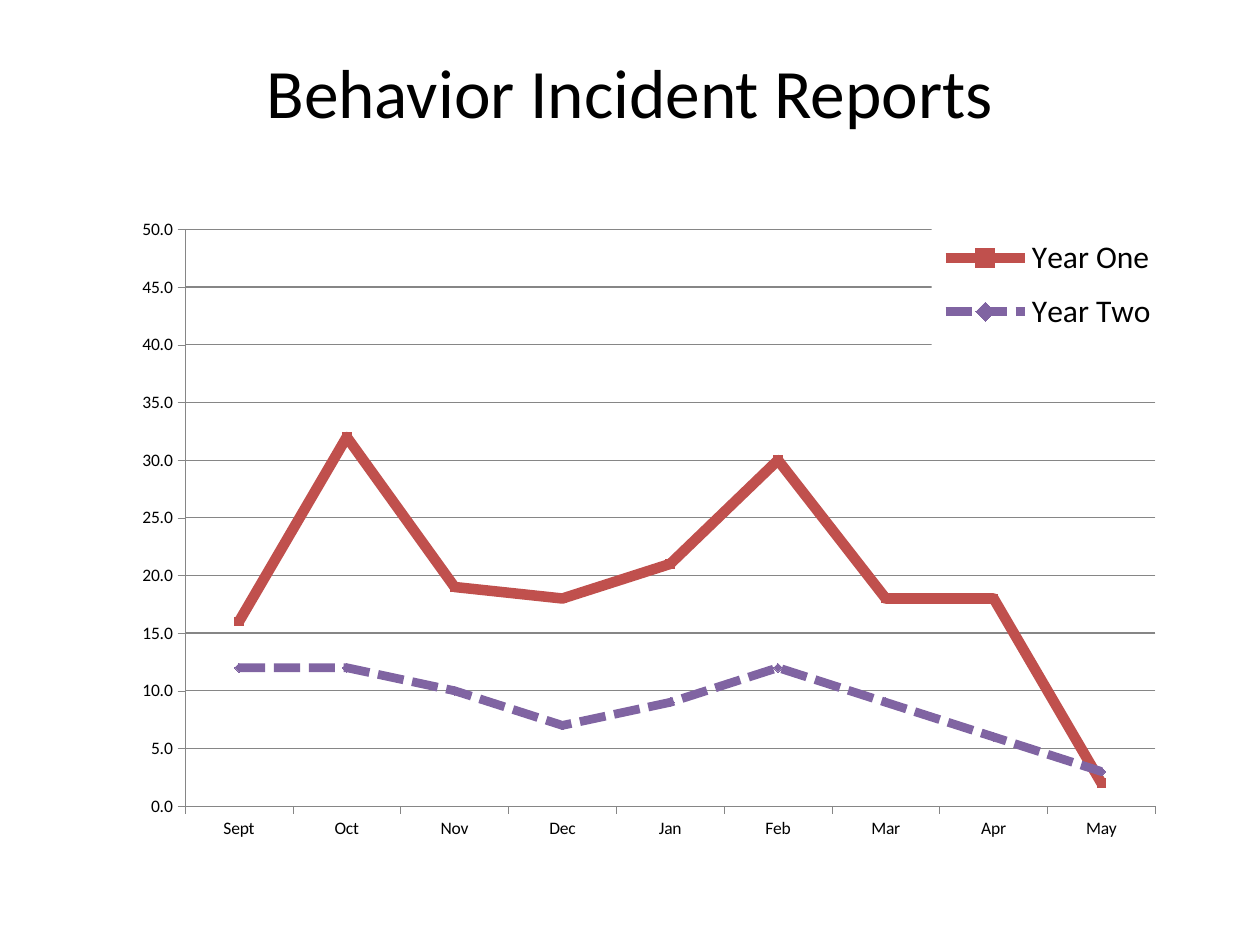
from lxml import etree
from pptx import Presentation
from pptx.chart.data import CategoryChartData
from pptx.dml.color import RGBColor
from pptx.enum.chart import XL_CHART_TYPE as CT, XL_LEGEND_POSITION as LP
from pptx.enum.chart import XL_MARKER_STYLE as MS, XL_TICK_MARK as TM
from pptx.enum.dml import MSO_LINE_DASH_STYLE as DASH
from pptx.enum.text import MSO_ANCHOR, PP_ALIGN
from pptx.oxml.ns import qn
from pptx.util import Pt

FONT = "Calibri"
MONTHS = ["Sept", "Oct", "Nov", "Dec", "Jan", "Feb", "Mar", "Apr", "May"]
SERIES = [
    ("Year One", [16, 32, 19, 18, 21, 30, 18, 18, 2],
     "C0504D", 6, DASH.SOLID, MS.SQUARE),
    ("Year Two", [12, 12, 10, 7, 9, 12, 9, 6, 3],
     "8064A2", 5, DASH.SQUARE_DOT, MS.DIAMOND),
]


def color(value):
    return RGBColor.from_string(value)


def set_font(font, size):
    font.name = FONT
    font.size = Pt(size)
    font.color.rgb = color("000000")


def set_line(line, value, width):
    line.color.rgb = color(value)
    line.width = Pt(width)


def set_layout(element, before, x, y, w, h, inner=False):
    for old in element.findall(qn("c:layout")):
        element.remove(old)
    layout = etree.Element(qn("c:layout"))
    manual = etree.SubElement(layout, qn("c:manualLayout"))
    settings = [("xMode", "edge"), ("yMode", "edge"),
                ("x", x), ("y", y), ("w", w), ("h", h)]
    if inner:
        settings.insert(0, ("layoutTarget", "inner"))
    for name, value in settings:
        etree.SubElement(manual, qn(f"c:{name}")).set("val", str(value))
    element.find(qn(before)).addprevious(layout)


def add_title(s, text):
    title = s.shapes.title
    title.left, title.top, title.width, title.height = Pt(36), Pt(24), Pt(648), Pt(56)
    tf = title.text_frame
    tf.text = text
    tf.vertical_anchor = MSO_ANCHOR.MIDDLE
    p = tf.paragraphs[0]
    p.alignment = PP_ALIGN.CENTER
    set_font(p.font, 39.6)


def format_axes(chart):
    for axis in (chart.category_axis, chart.value_axis):
        axis.major_tick_mark = TM.OUTSIDE
        axis.minor_tick_mark = TM.NONE
        set_line(axis.format.line, "868686", 0.25)
    axis = chart.value_axis
    axis.minimum_scale, axis.maximum_scale, axis.major_unit = 0, 50, 5
    axis.tick_labels.number_format = "0.0"
    axis.tick_labels.number_format_is_linked = False
    set_line(axis.major_gridlines.format.line, "868686", 0.75)


def format_series(series, value, width, dash, marker):
    series.smooth = False
    set_line(series.format.line, value, width)
    series.format.line.dash_style = dash
    series.marker.style = marker
    series.marker.size = 5
    series.marker.format.fill.solid()
    series.marker.format.fill.fore_color.rgb = color(value)
    set_line(series.marker.format.line, value, 0.75)


def add_legend(chart):
    chart.has_legend = True
    legend = chart.legend
    legend.position = LP.RIGHT
    legend.include_in_layout = False
    set_font(legend.font, 18)
    set_layout(legend._element, "c:overlay", 0.762, 0.02, 0.218, 0.19)
    sp_pr = etree.Element(qn("c:spPr"))
    fill = etree.SubElement(sp_pr, qn("a:solidFill"))
    etree.SubElement(fill, qn("a:srgbClr")).set("val", "FFFFFF")
    legend._element.find(qn("c:overlay")).addnext(sp_pr)


def add_line_chart(s):
    data = CategoryChartData(number_format="0.0")
    data.categories = MONTHS
    for name, values, *_ in SERIES:
        data.add_series(name, values)
    chart = s.shapes.add_chart(CT.LINE_MARKERS, Pt(66), Pt(120), Pt(612), Pt(372), data).chart
    chart.has_title = False
    chart.plots[0].vary_by_categories = False
    set_font(chart.font, 10)
    format_axes(chart)
    for series, (_, _, *style) in zip(chart.plots[0].series, SERIES):
        format_series(series, *style)
    add_legend(chart)
    plot_area = chart._chartSpace.chart.plotArea
    set_layout(plot_area, "c:lineChart", 0.065, 0.03, 0.906, 0.886, inner=True)


def main():
    prs = Presentation()
    prs.slide_width, prs.slide_height = Pt(720), Pt(540)
    s = prs.slides.add_slide(prs.slide_layouts[5])
    add_title(s, "Behavior Incident Reports")
    add_line_chart(s)
    prs.save("out.pptx")


if __name__ == "__main__":
    main()
